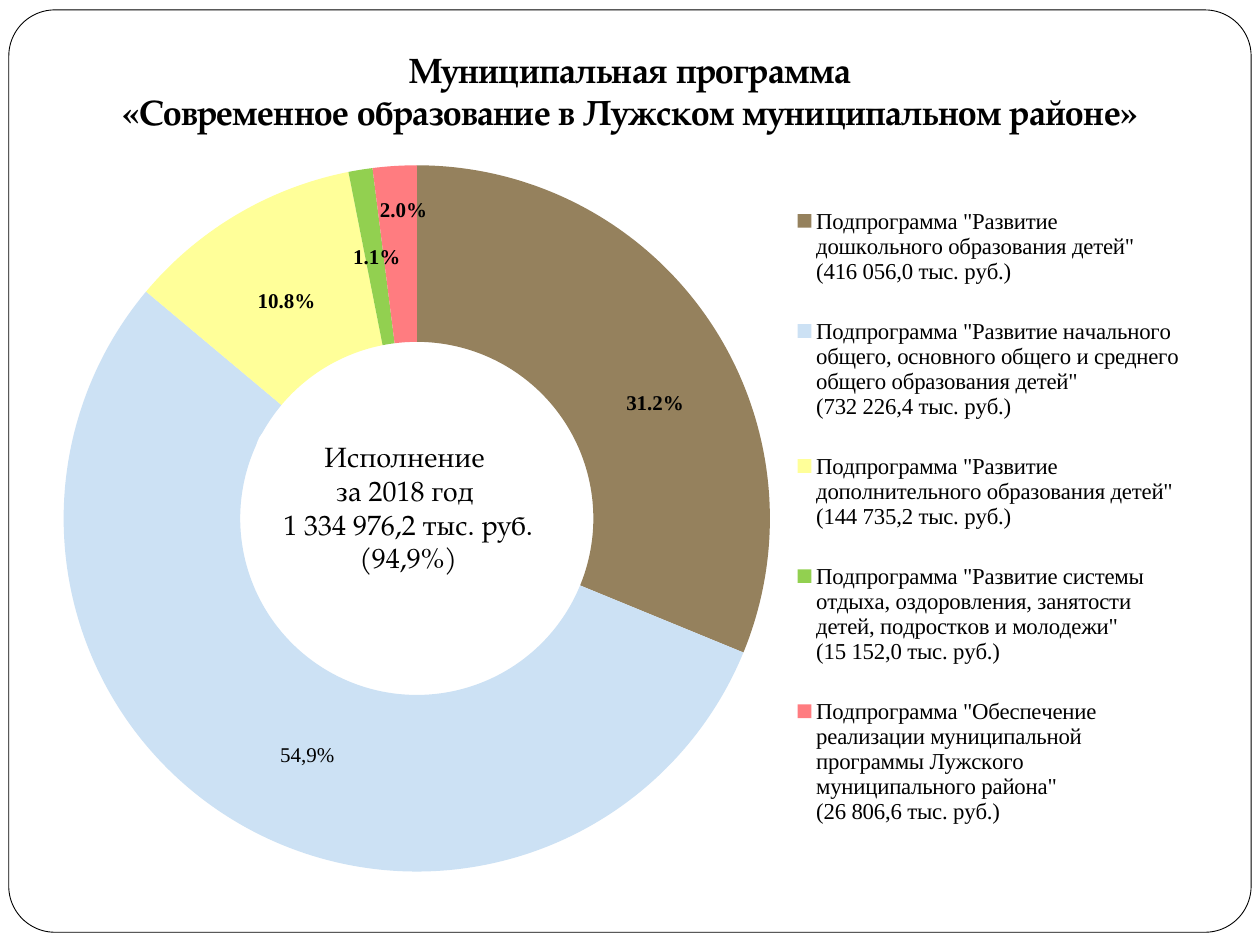
"""Build a slide with a doughnut chart of spending on an education programme."""
from lxml.etree import SubElement
from pptx import Presentation
from pptx.chart.data import CategoryChartData
from pptx.dml.color import RGBColor
from pptx.enum.chart import XL_CHART_TYPE as ChartType, XL_LEGEND_POSITION as LegendPosition
from pptx.enum.shapes import MSO_SHAPE as Shape
from pptx.enum.text import MSO_ANCHOR as Anchor, MSO_AUTO_SIZE as AutoSize, PP_ALIGN as Align
from pptx.oxml.ns import qn
from pptx.util import Inches, Pt

BLACK = RGBColor(0x00, 0x00, 0x00)
WHITE = RGBColor(0xFF, 0xFF, 0xFF)
BROWN = RGBColor(0x95, 0x81, 0x5D)
BLUE = RGBColor(0xCC, 0xE1, 0xF4)
YELLOW = RGBColor(0xFF, 0xFF, 0x99)
GREEN = RGBColor(0x92, 0xD0, 0x50)
RED = RGBColor(0xFF, 0x7C, 0x80)
HEADING_FONT, CHART_FONT = "TeX Gyre Pagella", "Times New Roman"

SUBPROGRAMMES = [
    ('Подпрограмма "Развитие дошкольного образования детей"\n(416 056,0 тыс. руб.)',
     31.2, BROWN, (1.6, 4.6)),
    ('Подпрограмма "Развитие начального общего, основного общего и среднего общего '
     'образования детей"\n(732 226,4 тыс. руб.)', 54.9, BLUE, (2.4, 1.4)),
    ('Подпрограмма "Развитие дополнительного образования детей"\n(144 735,2 тыс. руб.)',
     10.8, YELLOW, (0.4, 1.6)),
    ('Подпрограмма "Развитие системы отдыха, оздоровления, занятости детей, подростков '
     'и молодежи"\n(15 152,0 тыс. руб.)', 1.1, GREEN, (0.2, 0)),
    ('Подпрограмма "Обеспечение реализации муниципальной программы Лужского '
     'муниципального района"\n(26 806,6 тыс. руб.)', 2, RED, (0.3, -6.2)),
]
CUSTOM_LABELS = {1: "54,9%"}

presentation = Presentation()
presentation.slide_width, presentation.slide_height = Inches(10), Inches(7.5)
slide = presentation.slides.add_slide(presentation.slide_layouts[5])


def box(left, top, width, height):
    """Turn percentages of the slide into lengths."""
    slide_width, slide_height = presentation.slide_width, presentation.slide_height
    return [int(share * side / 100) for share, side in
            zip((left, top, width, height), (slide_width, slide_height) * 2)]


def set_layout(parent, index, **values):
    """Give a chart part a manual layout, with numbers in percent of the chart."""
    for old_layout in parent.findall(qn("c:layout")):
        parent.remove(old_layout)
    layout = SubElement(parent, qn("c:layout"))
    parent.insert(index, layout)
    manual = SubElement(layout, qn("c:manualLayout"))
    for name, value in values.items():
        text = value if isinstance(value, str) else str(round(value / 100, 4))
        SubElement(manual, qn(f"c:{name}")).set("val", text)


frame = slide.shapes.add_shape(Shape.ROUNDED_RECTANGLE, *box(0.7, 1.05, 98.6, 97.6))
frame.adjustments[0] = 0.05
frame.shadow.inherit = False
frame.fill.solid()
frame.fill.fore_color.rgb = WHITE
frame.line.color.rgb = BLACK
frame.line.width = Pt(0.5)

title = slide.shapes.title
frame._element.addnext(title._element)
title.left, title.top, title.width, title.height = box(3.5, 5.87, 93.7, 9.47)
title.text_frame.text = "Муниципальная программа \v«Современное образование в Лужском муниципальном районе» "
title_format = {"auto_size": AutoSize.NONE, "vertical_anchor": Anchor.BOTTOM, "margin_bottom": Inches(0.1)}
for name, value in title_format.items():
    setattr(title.text_frame, name, value)

chart_data = CategoryChartData(number_format="0.0")
chart_data.categories = [name for name, *_ in SUBPROGRAMMES]
chart_data.add_series("Series 1", [value for _, value, *_ in SUBPROGRAMMES])
chart = slide.shapes.add_chart(ChartType.DOUGHNUT, *box(3.5, 17.47, 91.3, 74.8), chart_data).chart
chart.has_title = False
chart.has_legend = True
chart.legend.position = LegendPosition.RIGHT
chart.legend.include_in_layout = False
for font, size in ((chart.font, 18), (chart.legend.font, 13)):
    font.name, font.size, font.color.rgb = CHART_FONT, Pt(size), BLACK

plot_area = chart._chartSpace.find(".//" + qn("c:plotArea"))
set_layout(plot_area, 0, layoutTarget="inner", xMode="edge", yMode="edge", x=1.7, y=0, w=61.4, h=100)
set_layout(chart.legend._element, 1, xMode="edge", yMode="edge", x=66.1, y=1.3, w=33.2, h=97)

plot = chart.plots[0]
plot.vary_by_categories = True
series = plot.series[0]
labels = series.data_labels
label_format = {"show_percentage": True, "show_value": False, "number_format": "0.0%",
                "number_format_is_linked": False}
for name, value in label_format.items():
    setattr(labels, name, value)
for name, value in {"name": CHART_FONT, "size": Pt(12), "bold": True}.items():
    setattr(labels.font, name, value)

for index, (_, _, color, (shift_x, shift_y)) in enumerate(SUBPROGRAMMES):
    point = series.points[index]
    point.format.fill.solid()
    point.format.fill.fore_color.rgb = color
    point.format.line.fill.background()
    if index in CUSTOM_LABELS:
        point.data_label.text_frame.text = CUSTOM_LABELS[index]
        font = point.data_label.text_frame.paragraphs[0].runs[0].font
    else:
        font = point.data_label.font
    font.name, font.size, font.bold = CHART_FONT, Pt(12), index not in CUSTOM_LABELS
    font.color.rgb = BLACK
    label = series._element.findall(".//" + qn("c:dLbl"))[index]
    set_layout(label, 1, x=shift_x, y=shift_y)
    if index not in CUSTOM_LABELS:
        number_format = SubElement(label, qn("c:numFmt"), formatCode="0.0%", sourceLinked="0")
        label.insert(2, number_format)
        label.find(qn("c:showVal")).set("val", "0")
        label.find(qn("c:showPercent")).set("val", "1")

center = slide.shapes.add_shape(Shape.ROUND_2_DIAG_RECTANGLE, *box(20.3, 44.8, 24.2, 17.73))
center.shadow.inherit = False
center.fill.solid()
center.fill.fore_color.rgb = WHITE
center.line.fill.background()
center.text_frame.vertical_anchor = Anchor.MIDDLE
center.text_frame.text = "Исполнение \nза 2018 год \n1 334 976,2 тыс. руб. (94,9%)"

for shape, size, bold in ((title, 20, True), (center, 16, False)):
    for paragraph in shape.text_frame.paragraphs:
        paragraph.alignment = Align.CENTER
        for run in paragraph.runs:
            for name, value in {"name": HEADING_FONT, "size": Pt(size), "bold": bold}.items():
                setattr(run.font, name, value)
            run.font.color.rgb = BLACK

presentation.save("out.pptx")
